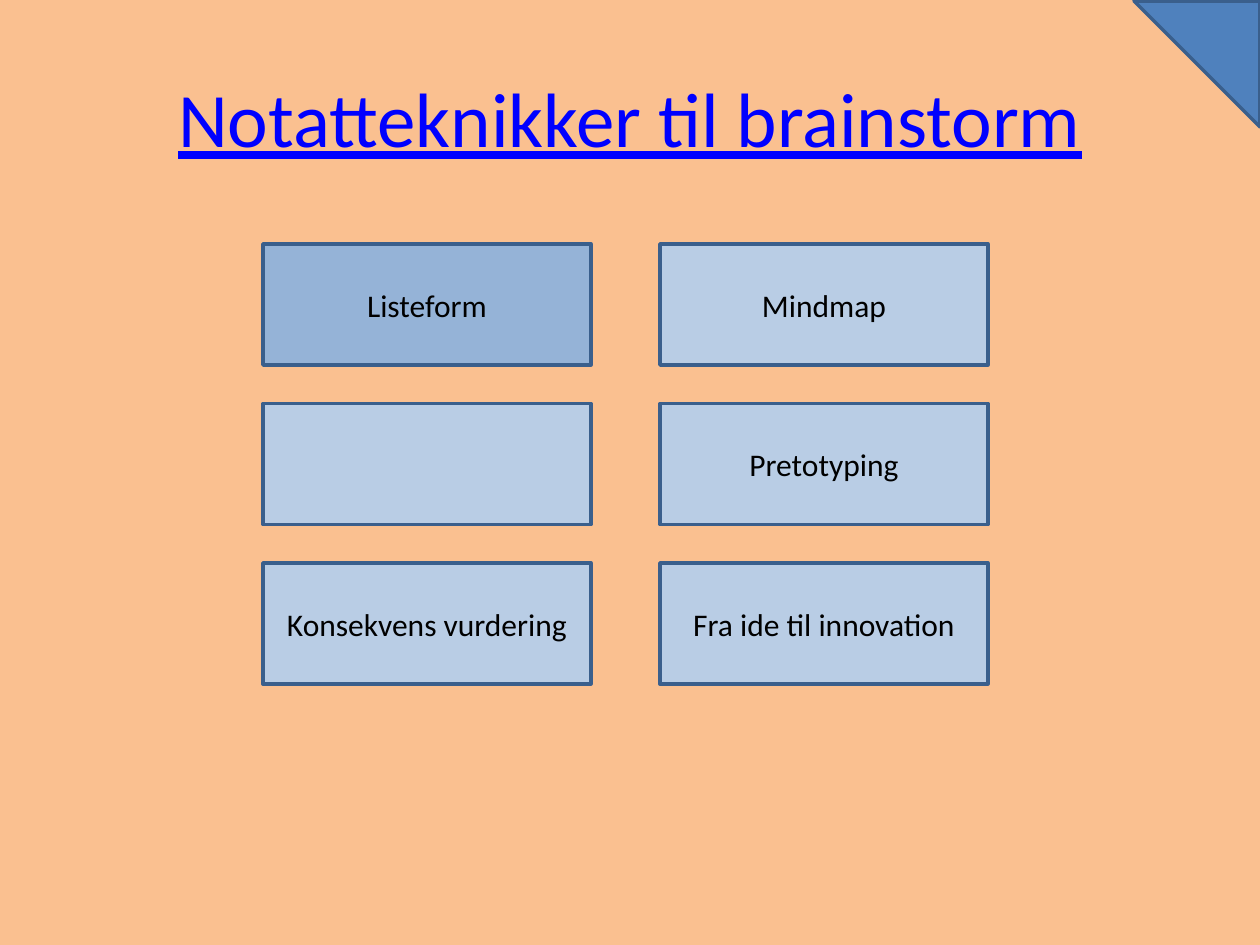
import pptx
import pptx.dml.color
import pptx.enum.shapes
import pptx.enum.text
import pptx.util

PX = 914400 / 126
SHAPE = pptx.enum.shapes.MSO_SHAPE
LINE = "3A5F8C"
PALE = "B9CDE5"
TECHNIQUES = [
    [("Listeform", "95B3D7"), ("Mindmap", PALE)],
    [("", PALE), ("Pretotyping", PALE)],
    [("Konsekvens vurdering", PALE), ("Fra ide til innovation", PALE)],
]


def emu(px):
    return pptx.util.Emu(round(px * PX))


def rgb(color):
    return pptx.dml.color.RGBColor.from_string(color)


def set_text(sp, text, size, color, underline=None):
    tf = sp.text_frame
    tf.text = text
    tf.word_wrap = True
    tf.vertical_anchor = pptx.enum.text.MSO_ANCHOR.MIDDLE
    p = tf.paragraphs[0]
    p.alignment = pptx.enum.text.PP_ALIGN.CENTER
    for r in p.runs:
        r.font.name = "Calibri"
        r.font.size = pptx.util.Pt(size)
        r.font.color.rgb = rgb(color)
        r.font.underline = underline


def add_block(slide, kind, box, fill):
    """Add a filled, outlined shape without shadow."""
    sp = slide.shapes.add_shape(kind, *map(emu, box))
    sp.shadow.inherit = False
    sp.fill.solid()
    sp.fill.fore_color.rgb = rgb(fill)
    sp.line.color.rgb = rgb(LINE)
    sp.line.width = pptx.util.Pt(2)
    return sp


def add_title(slide, box):
    title = slide.shapes.title
    title.left, title.top, title.width, title.height = map(emu, box)
    set_text(title, "Notatteknikker til brainstorm", 44, "0000FF", True)


def add_corner(slide, box):
    sp = add_block(slide, SHAPE.RIGHT_TRIANGLE, box, "4F81BD")
    sp.rotation = 180


def add_technique_grid(slide, box, cell_w, cell_h):
    """Spread the cells evenly so that the outer ones touch the box edges."""
    left, top, width, height = box
    step_x = (width - cell_w) / (len(TECHNIQUES[0]) - 1)
    step_y = (height - cell_h) / (len(TECHNIQUES) - 1)
    for row, cells in enumerate(TECHNIQUES):
        for col, (label, fill) in enumerate(cells):
            cell = (left + col * step_x, top + row * step_y, cell_w, cell_h)
            sp = add_block(slide, SHAPE.RECTANGLE, cell, fill)
            if label:
                set_text(sp, label, 18, "000000")


def main():
    prs = pptx.Presentation()
    prs.slide_width = pptx.util.Inches(10)
    prs.slide_height = pptx.util.Inches(7.5)
    slide = prs.slides.add_slide(prs.slide_layouts[5])
    slide.background.fill.solid()
    slide.background.fill.fore_color.rgb = rgb("FAC090")
    add_title(slide, (63, 38, 1134, 157))
    add_corner(slide, (1134, 1, 126, 126))
    add_technique_grid(slide, (263, 244, 725, 440), 328, 121)
    prs.save("out.pptx")


if __name__ == "__main__":
    main()
